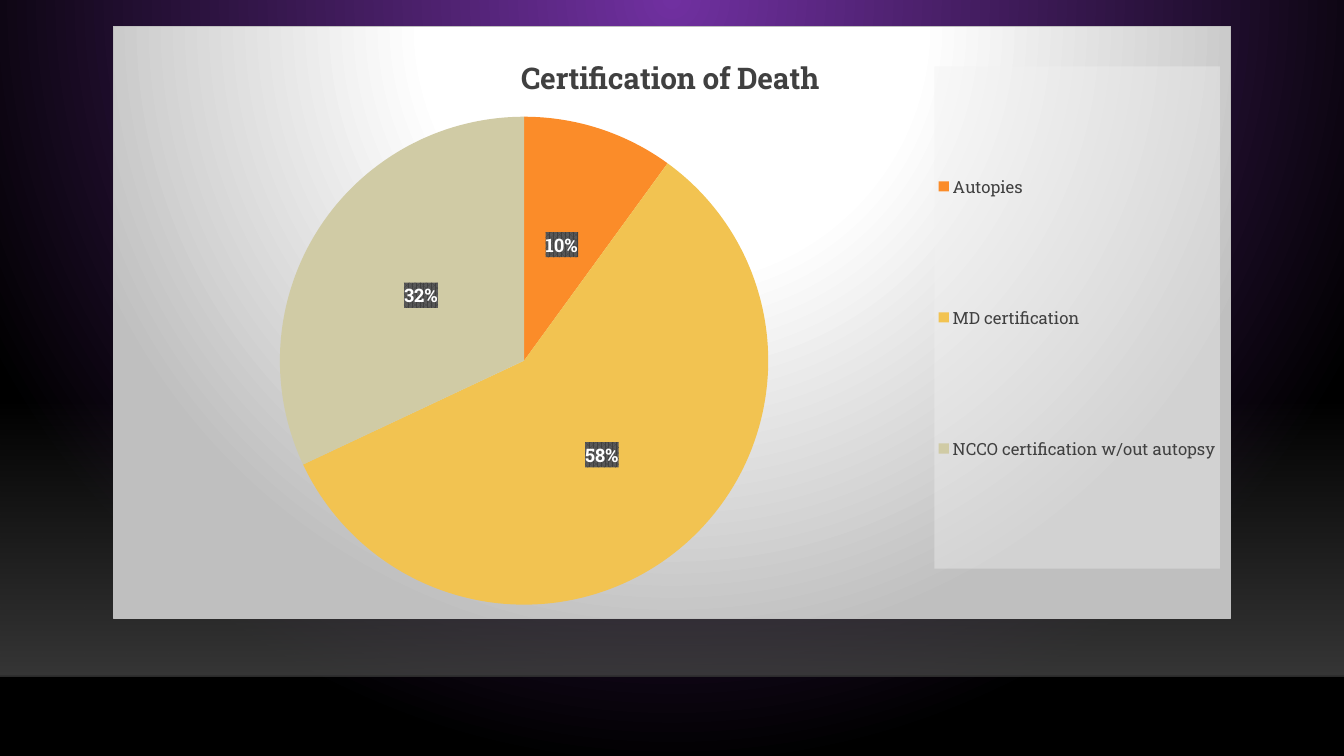
from lxml import etree
from pptx import Presentation
from pptx.chart.data import CategoryChartData
from pptx.dml.color import RGBColor
from pptx.enum.chart import XL_CHART_TYPE, XL_LABEL_POSITION, XL_LEGEND_POSITION
from pptx.enum.shapes import MSO_CONNECTOR, MSO_SHAPE
from pptx.oxml import parse_xml
from pptx.oxml.ns import nsdecls, qn
from pptx.util import Pt

PIE = XL_CHART_TYPE.PIE
CENTER = XL_LABEL_POSITION.CENTER
RIGHT = XL_LEGEND_POSITION.RIGHT
RECTANGLE = MSO_SHAPE.RECTANGLE
STRAIGHT = MSO_CONNECTOR.STRAIGHT

FONT = "Roboto Slab"
COLORS = {
    "purple": "7030A0", "black": "000000", "floor": "454545", "edge": "000001",
    "white": "FFFFFF", "border": "BFBFBF", "text": "404040", "legend": "F2F2F2",
    "label": "404040", "stripe": "595959",
    "autopsies": "FB8C29", "doctor": "F2C351", "coroner": "D0CBA5",
}
SLICES = [
    ("Autopies", 10, "autopsies"),
    ("MD certification", 58, "doctor"),
    ("NCCO certification w/out autopsy", 32, "coroner"),
]


def rgb(name):
    return RGBColor.from_string(COLORS[name])


def color_xml(name, alpha=100):
    return f'<a:srgbClr val="{COLORS[name]}"><a:alpha val="{alpha * 1000}"/></a:srgbClr>'


def gradient_xml(stops, direction):
    marks = "".join(f'<a:gs pos="{at * 1000}">{color_xml(name, alpha)}</a:gs>'
                    for at, name, alpha in stops)
    return f'<a:gradFill {nsdecls("a")}><a:gsLst>{marks}</a:gsLst>{direction}</a:gradFill>'


def circle_xml(left, top, right, bottom):
    return (f'<a:path path="circle"><a:fillToRect l="{left * 1000}" t="{top * 1000}" '
            f'r="{right * 1000}" b="{bottom * 1000}"/></a:path>')


def chart_style(fill):
    return parse_xml(f'<c:spPr {nsdecls("c", "a")}>{fill}</c:spPr>')


def place(parent, before, **fractions):
    """Give a chart part a manual layout in fractions of the chart."""
    for old in parent.findall(qn("c:layout")):
        parent.remove(old)
    target = '<c:layoutTarget val="inner"/>' if parent.tag == qn("c:plotArea") else ""
    modes = "".join(f'<c:{key}Mode val="edge"/>' for key in "xy")
    values = "".join(f'<c:{key} val="{value}"/>' for key, value in fractions.items())
    parent.find(qn(before)).addprevious(parse_xml(
        f'<c:layout {nsdecls("c")}><c:manualLayout>{target}{modes}{values}'
        f'</c:manualLayout></c:layout>'))


class SlideBuilder:
    SCALE = 9525

    def __init__(self, deck):
        self.page = deck.slides.add_slide(deck.slide_layouts[6])

    def px(self, *lengths):
        return [length * self.SCALE for length in lengths]

    def background(self, gradient):
        self.page.background.fill.solid()
        properties = self.page.background.fill._xPr
        properties.replace(properties.find(qn("a:solidFill")), parse_xml(gradient))

    def panel(self, left, top, width, height, gradient):
        box = self.page.shapes.add_shape(RECTANGLE, *self.px(left, top, width, height))
        box.shadow.inherit = False
        box.line.fill.background()
        box.fill.solid()
        properties = box._element.spPr
        properties.replace(properties.find(qn("a:solidFill")), parse_xml(gradient))

    def rule(self, left, top, right, color, alpha):
        line = self.page.shapes.add_connector(STRAIGHT, *self.px(left, top, right, top))
        line.line.width = Pt(1)
        line.line.color.rgb = rgb(color)
        shade = line._element.spPr.find(".//" + qn("a:srgbClr"))
        etree.SubElement(shade, qn("a:alpha")).set("val", str(alpha * 1000))
        etree.SubElement(line._element.spPr, qn("a:effectLst"))

    def font(self, font, size, color, bold=False):
        font.name, font.size, font.bold = FONT, Pt(size), bold
        font.color.rgb = rgb(color)

    def pie(self, left, top, width, height, title, slices):
        data = CategoryChartData()
        data.categories = [name for name, _, _ in slices]
        data.add_series("Series 1", [value for _, value, _ in slices])
        chart = self.page.shapes.add_chart(
            PIE, *self.px(left, top, width, height), data).chart
        self.font(chart.font, 10, "white")

        # Chart area
        fill = gradient_xml([(0, "white", 100), (39, "white", 100), (100, "border", 100)],
                            circle_xml(50, -80, 50, 180))
        border = f'<a:ln w="9525"><a:solidFill>{color_xml("border")}</a:solidFill></a:ln>'
        chart._chartSpace.find(qn("c:chart")).addnext(chart_style(fill + border))

        # Title
        chart.has_title = True
        para = chart.chart_title.text_frame.paragraphs[0]
        para.text = title
        self.font(para.font, 21.3, "text", True)
        place(chart.chart_title._element, "c:overlay", x=0.36, y=0.04)

        # Slices and their labels
        plot = chart.plots[0]
        plot.vary_by_categories = True
        place(plot._element.getparent(), "c:pieChart", x=0.148, y=0.152, w=0.439, h=0.824)
        for index, (_, _, color) in enumerate(slices):
            point = plot.series[0].points[index].format
            point.fill.solid()
            point.fill.fore_color.rgb = rgb(color)
            point.line.fill.background()
        labels = plot.series[0].data_labels
        labels.show_percentage, labels.show_value = True, False
        labels.position = CENTER
        self.font(labels.font, 13.3, "white", True)
        labels._element.find(qn("c:txPr")).addprevious(chart_style(
            f'<a:pattFill prst="pct75"><a:fgClr>{color_xml("label")}</a:fgClr>'
            f'<a:bgClr>{color_xml("stripe")}</a:bgClr></a:pattFill>'))

        # Legend
        chart.has_legend = True
        legend = chart.legend
        legend.position, legend.include_in_layout = RIGHT, False
        self.font(legend.font, 12, "text")
        place(legend._element, "c:overlay", x=0.735, y=0.067, w=0.256, h=0.848)
        legend._element.find(qn("c:txPr")).addprevious(chart_style(
            f'<a:solidFill>{color_xml("legend", 39)}</a:solidFill>'))


def main():
    deck = Presentation()
    deck.slide_width, deck.slide_height = 1280 * SlideBuilder.SCALE, 720 * SlideBuilder.SCALE
    slide = SlideBuilder(deck)

    # Backdrop
    slide.background(gradient_xml([(0, "purple", 100), (100, "black", 100)],
                                  circle_xml(43, 0, 43, 100)))
    slide.panel(0, 380, 1280, 264, gradient_xml(
        [(0, "floor", 0), (100, "floor", 80)], '<a:lin ang="5400000" scaled="0"/>'))
    slide.rule(0, 644, 1280, "edge", 20)

    # Chart
    slide.pie(108, 25, 1064, 565, "Certification of Death", SLICES)
    deck.save("out.pptx")


if __name__ == "__main__":
    main()
